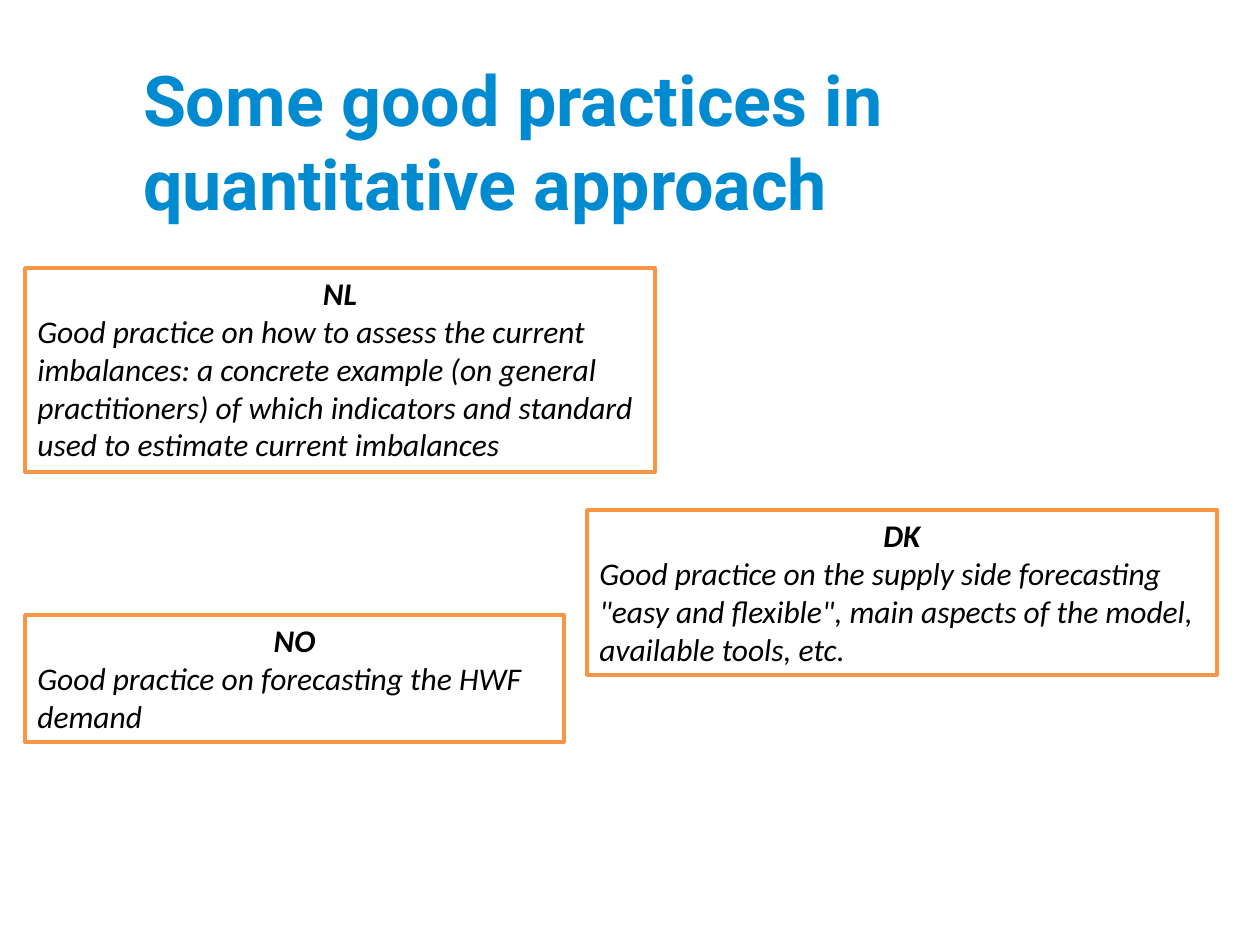
from pptx import Presentation
from pptx.dml.color import RGBColor
from pptx.enum.shapes import MSO_SHAPE
from pptx.enum.text import MSO_ANCHOR, PP_ALIGN
from pptx.util import Emu, Inches, Pt

PX_PER_INCH = 126


def px(length):
    return Emu(round(length * Inches(1) / PX_PER_INCH))


def color(hex_string):
    return RGBColor.from_string(hex_string)


class PracticeSlide:
    title_font, title_size, title_color = "Roboto", 40, "008ACF"
    body_font, body_size, body_color = "Calibri", 18, "000000"
    box_fill, box_line, box_line_width = "FFFFFF", "F79646", 2

    def __init__(self, presentation):
        self.slide = presentation.slides.add_slide(presentation.slide_layouts[6])

    def set_font(self, paragraph, name, size, hex_color, bold=False, italic=False):
        font = paragraph.font
        font.name, font.size = name, Pt(size)
        font.bold, font.italic = bold, italic
        font.color.rgb = color(hex_color)

    def title(self, text, left, top, width, height, indent):
        shape = self.slide.shapes.add_textbox(*map(px, (left, top, width, height)))
        frame = shape.text_frame
        frame.word_wrap = True
        frame.margin_left = px(indent)
        paragraph = frame.paragraphs[0]
        paragraph.text = text
        self.set_font(paragraph, self.title_font, self.title_size, self.title_color, bold=True)

    def practice_box(self, country, practice, left, top, width, height):
        shape = self.slide.shapes.add_shape(
            MSO_SHAPE.RECTANGLE, *map(px, (left, top, width, height)))
        shape.shadow.inherit = False
        shape.fill.solid()
        shape.fill.fore_color.rgb = color(self.box_fill)
        shape.line.color.rgb = color(self.box_line)
        shape.line.width = Pt(self.box_line_width)
        frame = shape.text_frame
        frame.word_wrap = True
        frame.vertical_anchor = MSO_ANCHOR.TOP
        heading, description = frame.paragraphs[0], frame.add_paragraph()
        heading.text, description.text = country, practice
        heading.alignment, description.alignment = PP_ALIGN.CENTER, PP_ALIGN.LEFT
        for paragraph in (heading, description):
            self.set_font(paragraph, self.body_font, self.body_size, self.body_color,
                          bold=paragraph is heading, italic=True)


def main():
    presentation = Presentation()
    presentation.slide_width, presentation.slide_height = Inches(10), Inches(7.5)
    slide = PracticeSlide(presentation)

    slide.title("Some good practices in quantitative approach", 67, 50, 1077, 158, indent=76)
    practices = [
        ("NL", "Good practice on how to assess the current imbalances: a concrete example "
               "(on general practitioners) of which indicators and standard used to "
               "estimate current imbalances", 25, 268, 630, 204),
        ("DK", 'Good practice on the supply side forecasting "easy and flexible", '
               "main aspects of the model, available tools, etc.", 587, 510, 630, 165),
        ("NO", "Good practice on forecasting the HWF demand", 25, 615, 539, 127),
    ]
    for practice in practices:
        slide.practice_box(*practice)

    presentation.save("out.pptx")


if __name__ == "__main__":
    main()
